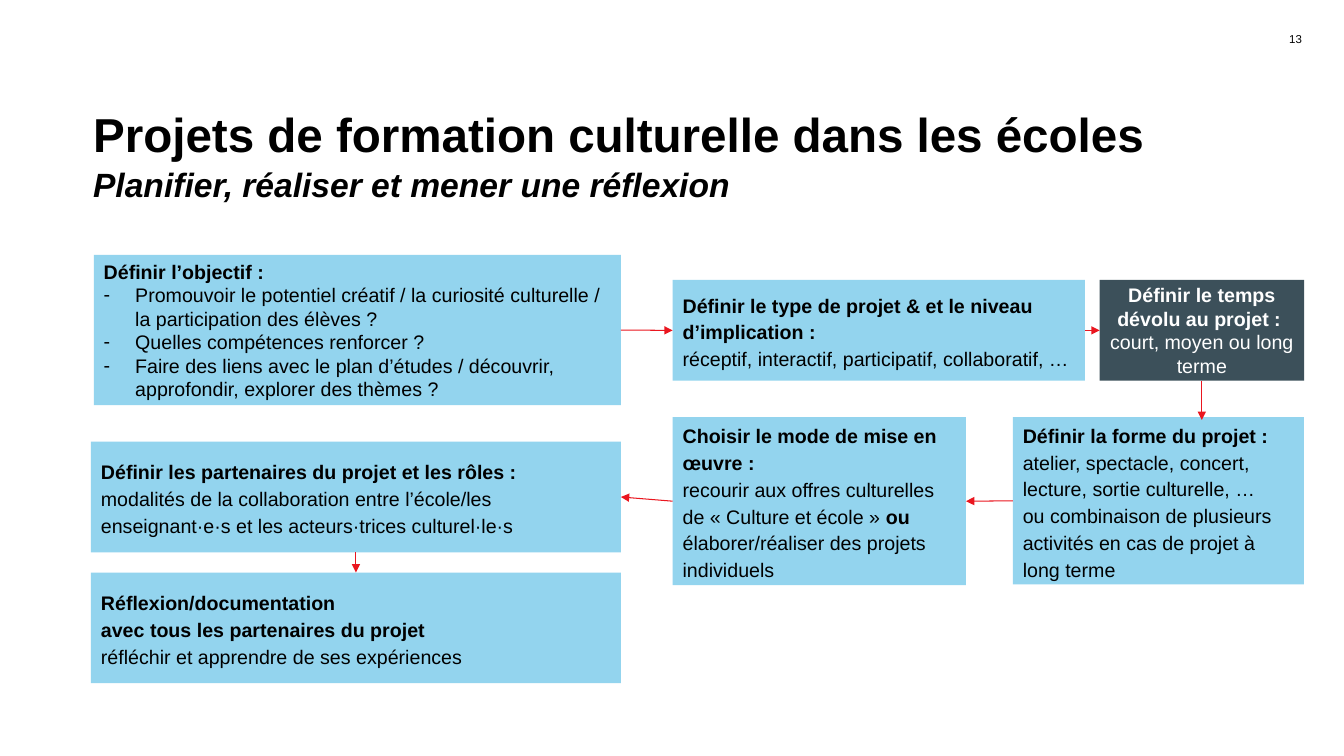
"""Build a slide showing the steps of a school culture project."""
from lxml import etree
from pptx import Presentation
from pptx import util as u
from pptx.dml.color import RGBColor
from pptx.enum import shapes, text
from pptx.oxml import ns

BLACK = RGBColor(0x00, 0x00, 0x00)
WHITE = RGBColor(0xFF, 0xFF, 0xFF)
SKY = RGBColor(0x93, 0xD4, 0xEE)
SLATE = RGBColor(0x3C, 0x50, 0x5A)
RED = RGBColor(0xEA, 0x16, 0x1F)
TOP, LEFT, BOTTOM, RIGHT = range(4)
LOOSE = 1.14
DASH = "- "


def sub(node, tag, **attrs):
    """Add a drawing element under a node."""
    return etree.SubElement(node, ns.qn(tag), attrs)


def bullet(para):
    """Give a paragraph a hanging dash."""
    props = para._p.get_or_add_pPr()
    indent = u.Pt(22.5)
    props.set("marL", str(indent))
    props.set("indent", str(-indent))
    sub(props, "a:buFont", typeface="Arial")
    sub(props, "a:buChar", char="-")


def write(frame, paras, size=14, color=BLACK, align=text.PP_ALIGN.LEFT,
          space=None, italic=None):
    """Fill a frame with paragraphs of runs, a leading star marking bold."""
    for num, runs in enumerate(paras):
        para = frame.paragraphs[0] if num == 0 else frame.add_paragraph()
        if runs[0].startswith(DASH):
            bullet(para)
        para.alignment = align
        if space:
            para.line_spacing = space
        for words in runs:
            run = para.add_run()
            run.text = words.removeprefix("*").removeprefix(DASH)
            font = run.font
            font.name, font.size = "Arial", u.Pt(size)
            font.bold = words.startswith("*")
            font.italic = italic
            font.color.rgb = color


def trim(frame, anchor):
    """Remove a frame's margins and set its anchor."""
    frame.margin_left = frame.margin_right = u.Pt(0)
    frame.margin_top = frame.margin_bottom = u.Pt(0)
    frame.word_wrap = True
    frame.auto_size = text.MSO_AUTO_SIZE.NONE
    frame.vertical_anchor = anchor


def head(slide):
    """Place the title with its italic second line."""
    title = slide.shapes.title
    title.left, title.top = u.Pt(66.5), u.Pt(88.5)
    title.width, title.height = u.Pt(839), u.Pt(57.5)
    frame = title.text_frame
    trim(frame, text.MSO_ANCHOR.BOTTOM)
    write(frame, [["*Projets de formation culturelle dans les écoles"],
                  ["*Planifier, réaliser et mener une réflexion"]],
          size=34, space=1.05)
    font = frame.paragraphs[1].runs[0].font
    font.size, font.italic = u.Pt(24), True


def number(slide):
    """Place the page number."""
    box = slide.shapes.add_textbox(u.Pt(905), u.Pt(23), u.Pt(25), u.Pt(9))
    trim(box.text_frame, text.MSO_ANCHOR.TOP)
    write(box.text_frame, [["13"]], size=8.2, align=text.PP_ALIGN.RIGHT)


def step(slide, place, paras, fill=SKY, **style):
    """Draw one step of the project as a filled box."""
    box = slide.shapes.add_shape(shapes.MSO_SHAPE.RECTANGLE, *map(u.Pt, place))
    box.shadow.inherit = False
    box.fill.solid()
    box.fill.fore_color.rgb = fill
    box.line.fill.background()
    box.text_frame.word_wrap = True
    box.text_frame.vertical_anchor = text.MSO_ANCHOR.MIDDLE
    write(box.text_frame, paras, **style)
    return box


def arrow(slide, start, side, goal=None, port=None, end=(0, 0)):
    """Draw a red arrow from a box's side to another side or a point."""
    line = slide.shapes.add_connector(
        shapes.MSO_CONNECTOR.STRAIGHT, 0, 0, *map(u.Pt, end))
    line.begin_connect(start, side)
    if goal is not None:
        line.end_connect(goal, port)
    line.line.color.rgb = RED
    line.line.width = u.Pt(0.75)
    sub(line.line._get_or_add_ln(), "a:tailEnd", type="triangle")
    sub(line._element.spPr, "a:effectLst")


def main():
    """Build the slide and save it."""
    deck = Presentation()
    deck.slide_width, deck.slide_height = u.Pt(960), u.Pt(540)
    slide = deck.slides.add_slide(deck.slide_layouts[5])
    number(slide)
    head(slide)
    aim = step(slide, (67, 182, 376.5, 107.5), [
        ["*Définir l’objectif :"],
        ["- Promouvoir le potentiel créatif / la curiosité culturelle / "
         "la participation des élèves ?"],
        ["- Quelles compétences renforcer ?"],
        ["- Faire des liens avec le plan d’études / découvrir, "
         "approfondir, explorer des thèmes ?"]])
    team = step(slide, (65, 315.5, 378.5, 79), [
        ["*Définir les partenaires du projet et les rôles :"],
        ["modalités de la collaboration entre l’école/les "
         "enseignant·e·s et les acteurs·trices culturel·le·s"]], space=LOOSE)
    kind = step(slide, (480.5, 200, 294.5, 72), [
        ["*Définir le type de projet & et le niveau d’implication :"],
        ["réceptif, interactif, participatif, collaboratif, …"]], space=LOOSE)
    form = step(slide, (723.5, 298, 208, 119.5), [
        ["*Définir la forme du projet :"],
        ["atelier, spectacle, concert, lecture, sortie culturelle, …"],
        ["ou combinaison de plusieurs activités en cas de projet à "
         "long terme"]], space=LOOSE)
    mode = step(slide, (480.5, 298, 209.5, 120), [
        ["*Choisir le mode de mise en œuvre :"],
        ["recourir aux offres culturelles de « Culture et école » ", "*ou ",
         "élaborer/réaliser des projets individuels"]], space=LOOSE)
    time = step(slide, (785.5, 200, 146, 72), [
        ["*Définir le temps dévolu au projet : "],
        ["court, moyen ou long terme"]],
        fill=SLATE, color=WHITE, align=text.PP_ALIGN.CENTER)
    review = step(slide, (65, 409, 378.5, 79), [
        ["*Réflexion/documentation"],
        ["*avec tous les partenaires du projet"],
        ["réfléchir et apprendre de ses expériences"]], space=LOOSE)
    arrow(slide, aim, RIGHT, kind, LEFT)
    arrow(slide, kind, RIGHT, time, LEFT)
    arrow(slide, time, BOTTOM, end=(858.5, 300))
    arrow(slide, form, LEFT, mode, RIGHT)
    arrow(slide, mode, LEFT, team, RIGHT)
    arrow(slide, team, BOTTOM, review, TOP)
    deck.save("out.pptx")


if __name__ == "__main__":
    main()
